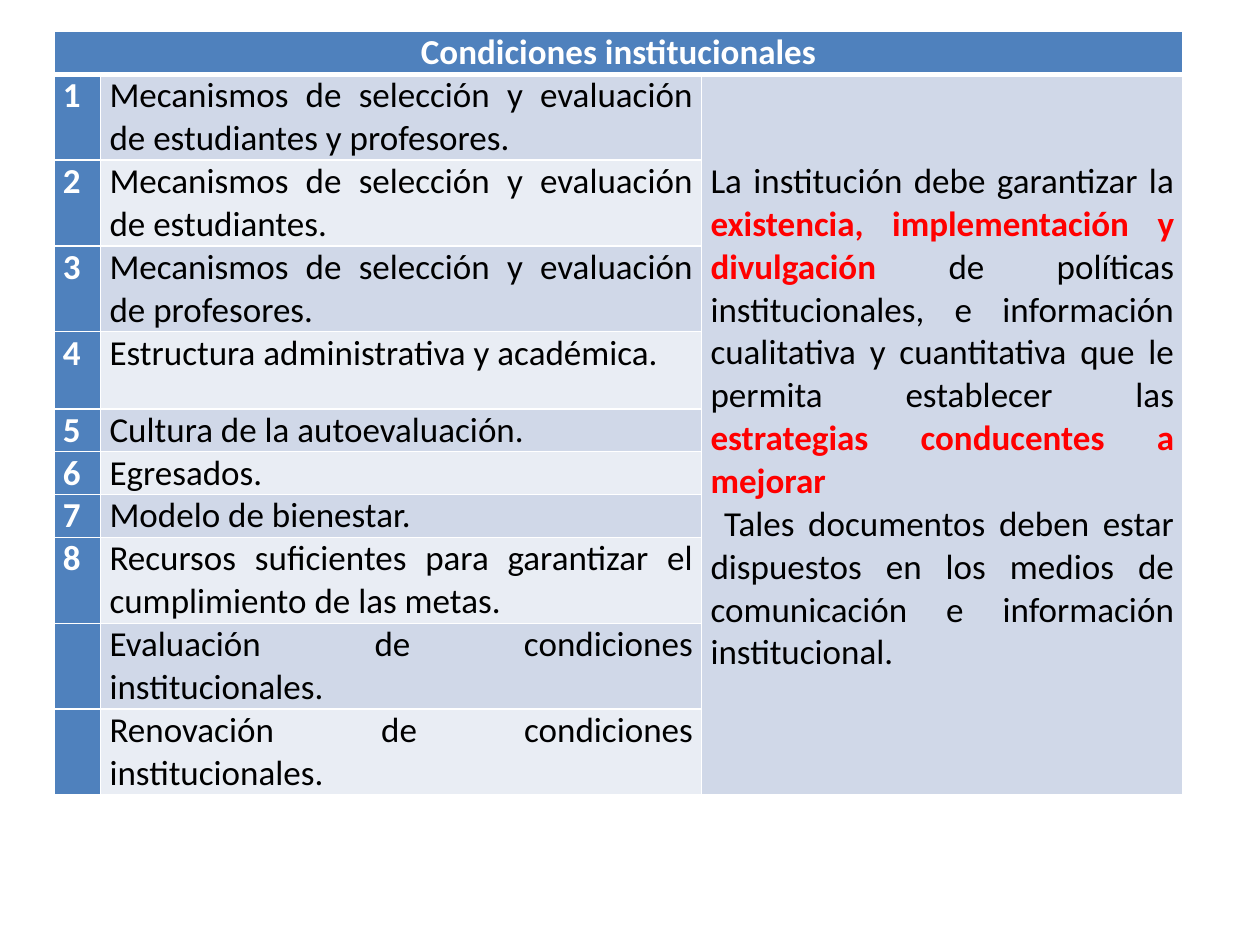
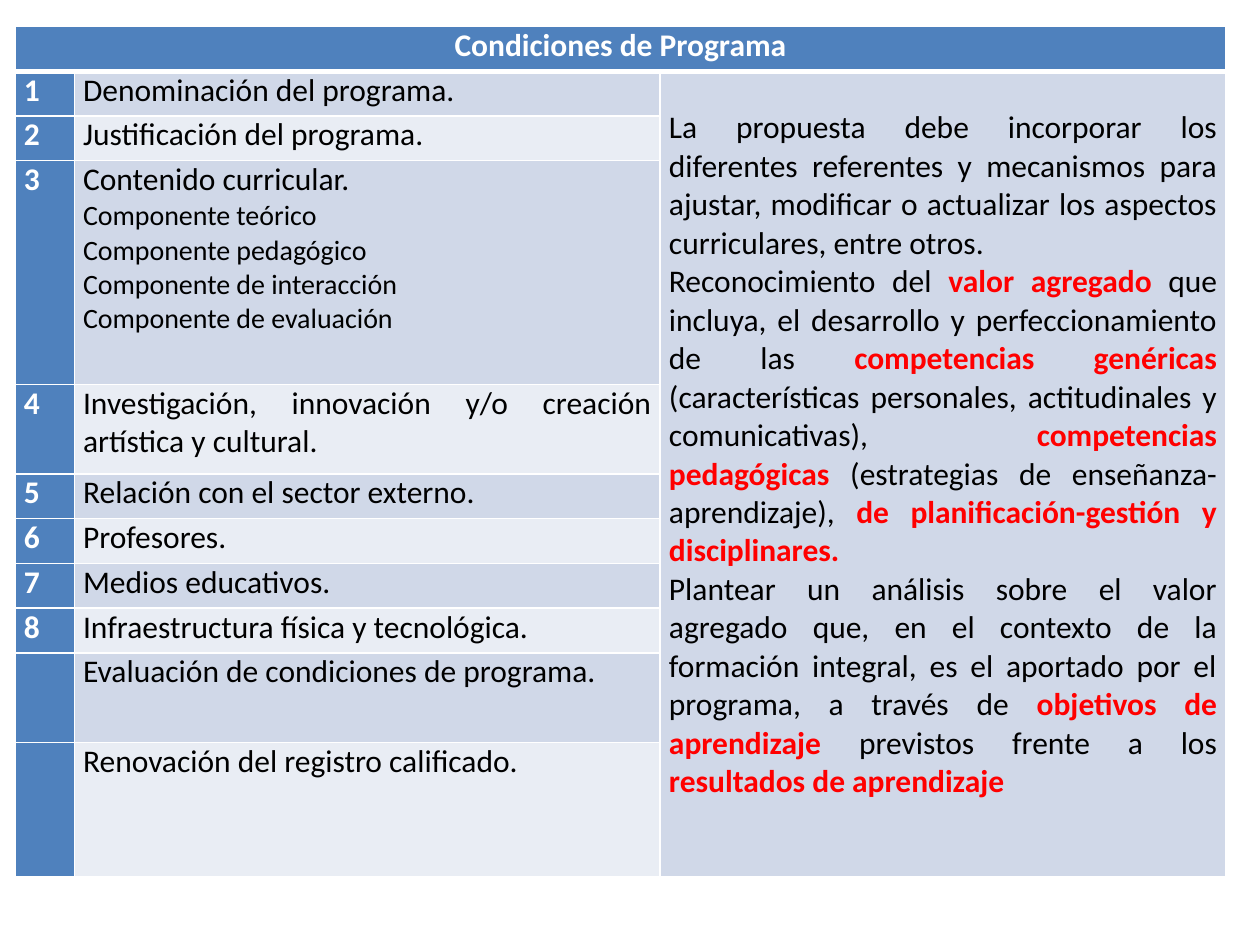
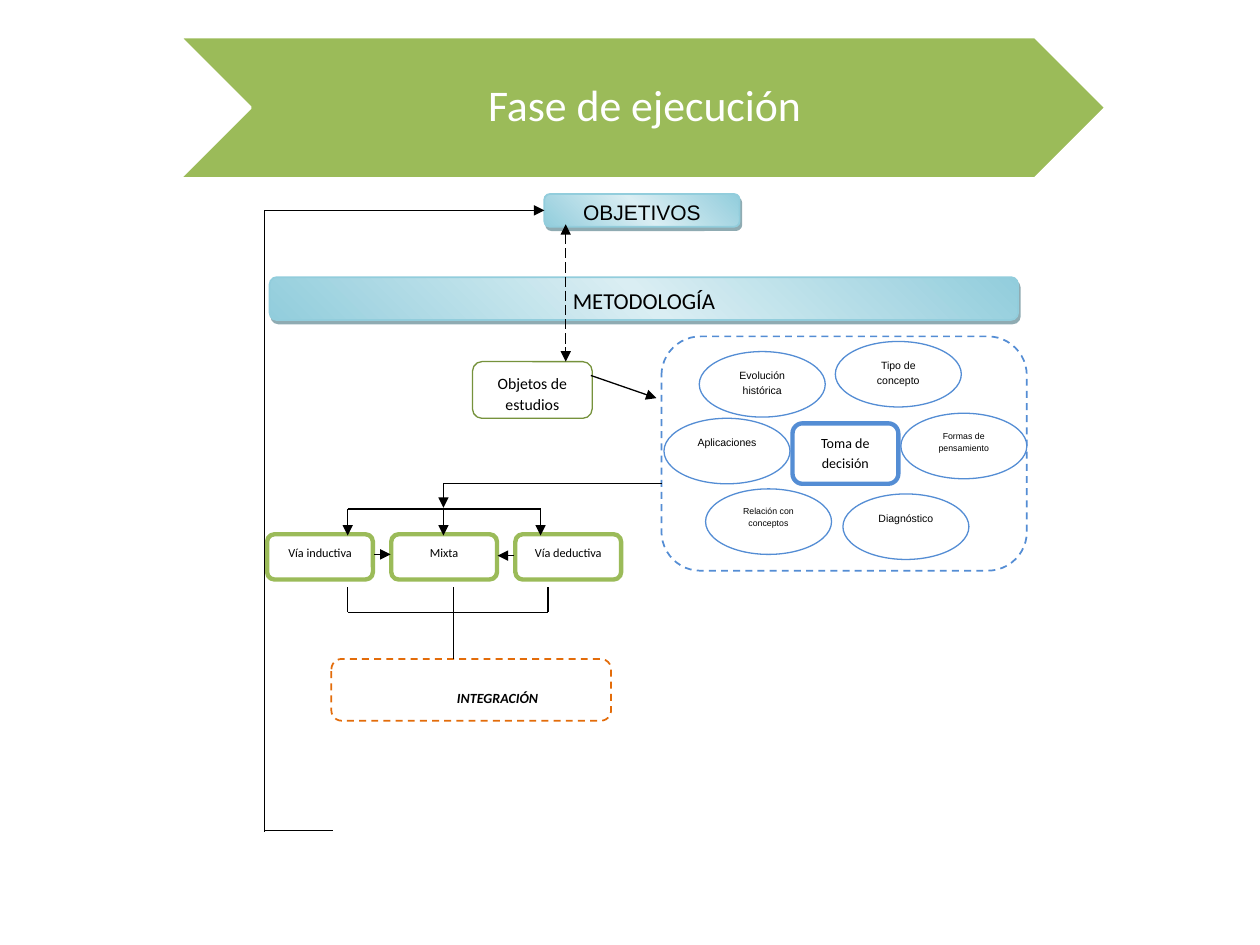
from lxml.etree import SubElement
from pptx import Presentation
from pptx.dml.color import RGBColor
from pptx.enum.dml import MSO_LINE
from pptx.enum.shapes import MSO_CONNECTOR, MSO_SHAPE
from pptx.enum.text import MSO_ANCHOR as Anchor, PP_ALIGN as Align
from pptx.oxml import parse_xml
from pptx.oxml.ns import nsdecls, qn
from pptx.util import Inches, Pt

# Shared look
COLORS = {
    "white": "FFFFFF", "black": "000000", "red": "FF0000",
    "header": "4F81BD", "band_dark": "D0D8E8", "band_light": "E9EDF4",
    "green": "9BBB59", "olive": "76923C", "blue": "548DD4", "orange": "E36C0A",
    "aqua": "92CDDC", "aqua_light": "DAEEF3", "aqua_shadow": "205867",
}
FONT = "Calibri"
CELL = 0.1  # inches: the slide is a grid of 100 columns by 75 rows
TITLE_ONLY, BLANK = 5, 6

# Table content: asterisks enclose emphasised words
INSTITUTION_ITEMS = [
    ["Mecanismos de selección y evaluación de estudiantes y profesores."],
    ["Mecanismos de selección y evaluación de estudiantes."],
    ["Mecanismos de selección y evaluación de profesores."],
    ["Estructura administrativa y académica."],
    ["Cultura de la autoevaluación."],
    ["Egresados."],
    ["Modelo de bienestar."],
    ["Recursos suficientes para garantizar el cumplimiento de las metas."],
    ["Evaluación de condiciones institucionales."],
    ["Renovación de condiciones institucionales."],
]
INSTITUTION_NOTE = [
    "La institución debe garantizar la *existencia, implementación y divulgación* "
    "de políticas institucionales, e información cualitativa y cuantitativa que le "
    "permita establecer las *estrategias conducentes a mejorar*",
    " Tales documentos deben estar dispuestos en los medios de comunicación e "
    "información institucional.",
]
PROGRAM_ITEMS = [
    ["Denominación del programa."],
    ["Justificación del programa."],
    ["Contenido curricular.", "Componente teórico", "Componente pedagógico",
     "Componente de interacción", "Componente de evaluación"],
    ["Investigación, innovación y/o creación artística y cultural."],
    ["Relación con el sector externo."],
    ["Profesores."],
    ["Medios educativos."],
    ["Infraestructura física y tecnológica."],
    ["Evaluación de condiciones de programa."],
    ["Renovación del registro calificado."],
]
PROGRAM_NOTE = [
    "La propuesta debe incorporar los diferentes referentes y mecanismos para ajustar, "
    "modificar o actualizar los aspectos curriculares, entre otros.",
    "Reconocimiento del *valor agregado* que incluya, el desarrollo y perfeccionamiento "
    "de las *competencias genéricas* (características personales, actitudinales y "
    "comunicativas), *competencias pedagógicas* (estrategias de enseñanza-aprendizaje), "
    "*de planificación-gestión y disciplinares.*",
    "Plantear un análisis sobre el valor agregado que, en el contexto de la formación "
    "integral, es el aportado por el programa, a través de *objetivos de aprendizaje* "
    "previstos frente a los *resultados de aprendizaje*",
]


def color(name):
    return RGBColor.from_string(COLORS[name])


def grid(*cells):
    return [Inches(count * CELL) for count in cells]


def set_font(font, size, shade="black", bold=False, name=FONT):
    font.name, font.size, font.bold = name, Pt(size), bold
    font.color.rgb = color(shade)


# Tables
def style_cell(cell, fill, top=1, bottom=1):
    cell.margin_left = cell.margin_right = Inches(0.07)
    cell.margin_top = cell.margin_bottom = 0
    properties = cell._tc.get_or_add_tcPr()
    for side, width in (("L", 1), ("R", 1), ("T", top), ("B", bottom)):
        properties.append(parse_xml(
            f'<a:ln{side} {nsdecls("a")} w="{Pt(width)}"><a:solidFill>'
            f'<a:srgbClr val="{COLORS["white"]}"/></a:solidFill></a:ln{side}>'))
    cell.fill.solid()
    cell.fill.fore_color.rgb = color(fill)


def write_cell(cell, lines, size, shade="black", bold=False,
               align=Align.JUSTIFY, detail_size=None):
    frame = cell.text_frame
    for index, line in enumerate(lines):
        para = frame.paragraphs[0] if index == 0 else frame.add_paragraph()
        para.alignment = align
        line_size = detail_size if index and detail_size else size
        set_font(para.font, line_size, shade, bold)
        for part, words in enumerate(line.split("*")):
            if words:
                span = para.add_run()
                span.text = words
                emphasis = part % 2 == 1
                set_font(span.font, line_size, "red" if emphasis else shade, bold or emphasis)


def add_conditions(page, heading, items, note, place, columns, row_units, size, note_top):
    """Numbered conditions on the left, one tall note on the right."""
    rows = len(items) + 1
    table = page.shapes.add_table(rows, 3, *grid(*place)).table
    table.horz_banding = False
    for column, width in zip(table.columns, grid(*columns)):
        column.width = width
    unit = place[3] / sum(row_units)
    for row, count in zip(table.rows, row_units):
        row.height = Inches(count * unit * CELL)

    for row in range(rows):
        band = "band_dark" if row % 2 else "band_light"
        fills = ["header"] * 3 if row == 0 else ["header", band, "band_dark"]
        for column, fill in enumerate(fills):
            style_cell(table.cell(row, column), fill,
                       top=3 if row == 1 else 1, bottom=3 if row == 0 else 1)
            set_font(table.cell(row, column).text_frame.paragraphs[0].font, size)

    table.cell(0, 0).merge(table.cell(0, 2))
    write_cell(table.cell(0, 0), [heading], size, "white", True, Align.CENTER)
    for number, lines in enumerate(items, start=1):
        if number <= 8:
            write_cell(table.cell(number, 0), [str(number)], size, "white", True)
        write_cell(table.cell(number, 1), lines, size, detail_size=16)
    note_cell = table.cell(1, 2)
    note_cell.merge(table.cell(rows - 1, 2))
    note_cell.margin_top = Inches(note_top)
    write_cell(note_cell, note, size)


# Diagram parts
def add_block(page, place, text="", size=8, line=None, width=0.75, dash=False,
              kind=MSO_SHAPE.ROUNDED_RECTANGLE, font=FONT, fill="white"):
    box = page.shapes.add_shape(kind, *grid(*place))
    box.shadow.inherit = False
    box.fill.solid()
    box.fill.fore_color.rgb = color(fill)
    if line:
        box.line.color.rgb = color(line)
        box.line.width = Pt(width)
        if dash:
            box.line.dash_style = MSO_LINE.DASH
    else:
        box.line.fill.background()
    if text:
        frame = box.text_frame
        frame.word_wrap, frame.vertical_anchor = True, Anchor.TOP
        para = frame.paragraphs[0]
        para.text, para.alignment, para.line_spacing = text, Align.CENTER, 1.15
        set_font(para.font, size, name=font)
    return box


def add_glossy_bar(page, place, text, size, font=FONT):
    bar = add_block(page, place, text, size, "aqua", 1, font=font)
    frame = bar.text_frame
    frame.vertical_anchor = Anchor.MIDDLE
    frame.margin_left = frame.margin_right = frame.margin_top = frame.margin_bottom = 0
    properties = bar.element.spPr
    stops = "".join(
        f'<a:gs pos="{position}"><a:srgbClr val="{COLORS[shade]}"/></a:gs>'
        for position, shade in ((0, "aqua"), (50000, "aqua_light"), (100000, "aqua")))
    solid = properties.find(qn("a:solidFill"))
    properties.replace(solid, parse_xml(
        f'<a:gradFill {nsdecls("a")} rotWithShape="1"><a:gsLst>{stops}</a:gsLst>'
        '<a:lin ang="18900000" scaled="1"/></a:gradFill>'))
    properties.find(qn("a:effectLst")).append(parse_xml(
        f'<a:outerShdw {nsdecls("a")} blurRad="0" dist="{Pt(2.2)}" dir="3780000" '
        f'algn="ctr" rotWithShape="0"><a:srgbClr val="{COLORS["aqua_shadow"]}">'
        '<a:alpha val="50000"/></a:srgbClr></a:outerShdw>'))


def add_line(page, start, end, arrows=(), dash=False):
    """Arrows may name headEnd (at start) and tailEnd (at end), in that order."""
    connector = page.shapes.add_connector(MSO_CONNECTOR.STRAIGHT, *grid(*start, *end))
    connector.line.color.rgb = color("black")
    connector.line.width = Pt(0.75)
    if dash:
        connector.line.dash_style = MSO_LINE.LONG_DASH
    for arrow in arrows:
        SubElement(connector.line._get_or_add_ln(), qn(f"a:{arrow}"), type="triangle")
    SubElement(connector.element.spPr, qn("a:effectLst"))


def add_banner(page, text):
    chevron = add_block(page, (14.2, 2.9, 73.6, 11.3), line="white", width=2,
                        kind=MSO_SHAPE.CHEVRON, fill="green")
    title = page.shapes.title
    title.left, title.top, title.width, title.height = grid(28.9, 2.9, 44.2, 11.3)
    chevron.element.addnext(title.element)
    frame = title.text_frame
    frame.vertical_anchor = Anchor.MIDDLE
    frame.margin_left, frame.margin_right = Inches(0.03), 0
    frame.margin_top = frame.margin_bottom = Inches(0.02)
    para = frame.paragraphs[0]
    para.text, para.alignment, para.line_spacing = text, Align.CENTER, 0.9
    set_font(para.font, 25, "white")


def add_execution_diagram(page):
    # Goals, method and object of study
    add_glossy_bar(page, (21.4, 22, 59.4, 3.4), "METODOLOGÍA", 13)
    add_glossy_bar(page, (43.2, 15.4, 15.5, 2.6), "OBJETIVOS", 12, "Arial")
    add_block(page, (37.5, 28.7, 9.5, 4.5), "Objetos de estudios", 9, "olive")

    # Decision area
    add_block(page, (52.5, 26.7, 29, 18.6), line="blue", width=1, dash=True)
    factors = [
        (52.7, 33.2, "Aplicaciones", 6), (55.5, 27.9, "Evolución histórica", 6),
        (66.3, 27.1, "Tipo de concepto", 6), (71.5, 32.8, "Formas de pensamiento", 5),
        (66.9, 39.2, "Diagnóstico", 6), (56, 38.8, "Relación con conceptos", 5),
    ]
    for left, top, text, size in factors:
        add_block(page, (left, top, 10, 5.2), text, size, "blue",
                  kind=MSO_SHAPE.OVAL, font="Arial")
    add_block(page, (62.9, 33.6, 8.4, 4.8), "Toma de decisión", 8, "blue", 2.5)

    # Three ways and their integration
    for index, way in enumerate(("Vía inductiva", "Mixta", "Vía deductiva")):
        add_block(page, (21.2 + index * 9.85, 42.4, 8.4, 3.6), way, 7, "green", 2.5)
    add_block(page, (26.3, 52.3, 22.2, 4.9), line="orange", width=1, dash=True)
    label = add_block(page, (34.1, 53.9, 10.8, 2.1), "INTEGRACIÓN")
    label_font = label.text_frame.paragraphs[0].font
    label_font.bold = label_font.italic = True

    # Return path to the goals
    add_line(page, (21, 65.9), (26.4, 65.9))
    add_line(page, (21, 66), (21, 16.7))
    add_line(page, (21, 16.7), (43.2, 16.7), ["tailEnd"])

    # Links between goals, object and decision
    add_line(page, (44.9, 17.8), (44.9, 28.7), ["headEnd", "tailEnd"], dash=True)
    add_line(page, (46.9, 29.8), (52.1, 31.6), ["tailEnd"])

    # Branches into the three ways
    add_line(page, (52.5, 38.4), (35.2, 38.4))
    add_line(page, (35.2, 38.4), (35.2, 40.3), ["tailEnd"])
    add_line(page, (27.6, 40.4), (42.9, 40.4))
    for column in (27.6, 35.2, 42.9):
        add_line(page, (column, 40.4), (column, 42.5), ["tailEnd"])
    add_line(page, (29.7, 44), (31, 44), ["tailEnd"])
    add_line(page, (40.8, 44.1), (39.5, 44.1), ["tailEnd"])

    # Branches joining at the integration
    for column in (27.6, 36, 43.5):
        add_line(page, (column, 46.6), (column, 48.6))
    add_line(page, (27.6, 48.6), (43.5, 48.6))
    add_line(page, (36, 48.6), (36, 52.3))


def main():
    deck = Presentation()
    deck.slide_width, deck.slide_height = grid(100, 75)
    layouts = deck.slide_layouts

    add_conditions(
        deck.slides.add_slide(layouts[BLANK]), "Condiciones institucionales",
        INSTITUTION_ITEMS, INSTITUTION_NOTE, (4.3, 2.5, 89.6, 60.5), (3.7, 47.7, 38.2),
        [1, 2, 2, 2, 1.8, 1, 1, 1, 2, 2, 2], size=20, note_top=0.68)
    add_conditions(
        deck.slides.add_slide(layouts[BLANK]), "Condiciones de Programa",
        PROGRAM_ITEMS, PROGRAM_NOTE, (1.2, 2.1, 96.1, 67.5), (4.7, 46.5, 44.9),
        [1, 1, 1, 5, 2, 1, 1, 1, 1, 2, 3], size=18, note_top=0.3)

    execution = deck.slides.add_slide(layouts[TITLE_ONLY])
    add_execution_diagram(execution)
    add_banner(execution, "Fase de ejecución")

    deck.save("out.pptx")


if __name__ == "__main__":
    main()
